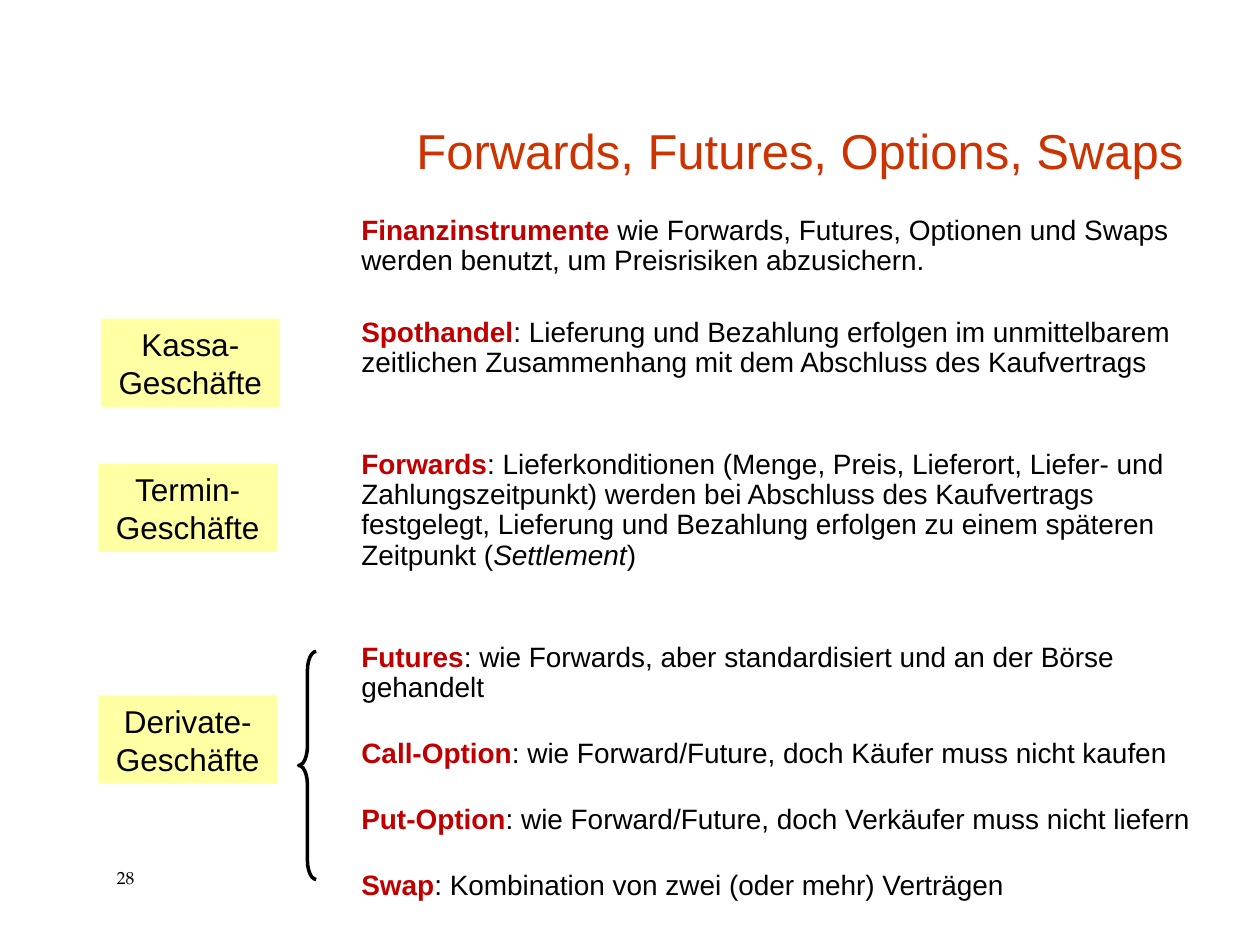
import pptx
import pptx.dml.color
import pptx.enum.shapes
import pptx.enum.text
import pptx.util
from lxml import etree

COLORS = {"text": "000000", "title": "CC3300", "term": "C00000", "box": "FFFFA3"}
COLS, ROWS = 100, 75
WIDTH, HEIGHT = pptx.util.Inches(10), pptx.util.Inches(7.5)
ALIGN = pptx.enum.text.PP_ALIGN
SHAPE = pptx.enum.shapes.MSO_SHAPE

TERMS = [
    (0, "Finanzinstrumente", " wie Forwards, Futures, Optionen und Swaps werden benutzt, "
        "um Preisrisiken abzusichern."),
    (23.5, "Spothandel", ": Lieferung und Bezahlung erfolgen im unmittelbarem zeitlichen "
        "Zusammenhang mit dem Abschluss des Kaufvertrags"),
    (41, "Forwards", ": Lieferkonditionen (Menge, Preis, Lieferort, Liefer- und "
        "Zahlungszeitpunkt) werden bei Abschluss des Kaufvertrags festgelegt, Lieferung und "
        "Bezahlung erfolgen zu einem späteren Zeitpunkt (", "Settlement", ")"),
    (41, "Futures", ": wie Forwards, aber standardisiert und an der Börse gehandelt"),
    (20.5, "Call-Option", ": wie Forward/Future, doch Käufer muss nicht kaufen"),
    (20.5, "Put-Option", ": wie Forward/Future, doch Verkäufer muss nicht liefern"),
    (20.5, "Swap", ": Kombination von zwei (oder mehr) Verträgen"),
]
BOXES = [(8, 25.3, "Kassa-"), (7.8, 36.8, "Termin-"), (7.8, 55.2, "Derivate-")]


def rgb(name):
    """Return the named colour."""
    return pptx.dml.color.RGBColor.from_string(COLORS[name])


def place(col, row, cols, rows):
    """Turn grid columns and rows into slide lengths."""
    return (int(WIDTH * col / COLS), int(HEIGHT * row / ROWS),
            int(WIDTH * cols / COLS), int(HEIGHT * rows / ROWS))


def style(r, size, color="text", font="Arial", bold=False, italic=False):
    """Format one run."""
    r.font.size, r.font.name = pptx.util.Pt(size), font
    r.font.bold, r.font.italic = bold, italic
    r.font.color.rgb = rgb(color)


def write(tf, text, size, align=ALIGN.LEFT, **look):
    """Fill a text frame with one formatted paragraph."""
    tf.word_wrap = True
    p = tf.paragraphs[0]
    p.text, p.alignment = text, align
    for r in p.runs:
        style(r, size, **look)


def add_label(s, grid, text, size, **look):
    """Add a text box with a single paragraph."""
    tf = s.shapes.add_textbox(*place(*grid)).text_frame
    write(tf, text, size, **look)
    return tf


def add_terms(s, grid):
    """Add the list of terms and their explanations."""
    tf = s.shapes.add_textbox(*place(*grid)).text_frame
    tf.word_wrap = True
    for i, (gap, *parts) in enumerate(TERMS):
        p = tf.add_paragraph() if i else tf.paragraphs[0]
        p.line_spacing = 0.9
        if gap:
            p.space_before = pptx.util.Pt(gap)
        for n, part in enumerate(parts):
            r = p.add_run()
            r.text = part
            style(r, 16, "text" if n else "term", bold=n == 0, italic=n == 2)


def add_box(s, col, row, kind):
    """Add a yellow box naming a kind of deal."""
    sp = s.shapes.add_shape(SHAPE.RECTANGLE, *place(col, row, 14.2, 7))
    sp.shadow.inherit = False
    sp.fill.solid()
    sp.fill.fore_color.rgb = rgb("box")
    sp.line.fill.background()
    write(sp.text_frame, kind + "\nGeschäfte", 18, ALIGN.CENTER)


def add_brace(s, grid):
    """Add the brace that groups the derivatives."""
    sp = s.shapes.add_shape(SHAPE.LEFT_BRACE, *place(*grid))
    sp.shadow.inherit = False
    sp.adjustments[0], sp.adjustments[1] = 1.08, 0.5
    sp.fill.background()
    sp.line.color.rgb = rgb("text")
    sp.line.width = pptx.util.Pt(2)


def main():
    """Build the slide and save it."""
    prs = pptx.Presentation()
    prs.slide_width, prs.slide_height = WIDTH, HEIGHT
    s = prs.slides.add_slide(prs.slide_layouts[6])
    add_label(s, (8.3, 68.3, 6.7, 2.7), "28", 10, font="TeX Gyre Pagella")
    tf = add_label(s, (20.9, 4.2, 74, 10.5), "Forwards, Futures, Options, Swaps", 28,
                   align=ALIGN.RIGHT, color="title")
    tf.vertical_anchor = pptx.enum.text.MSO_ANCHOR.BOTTOM
    add_terms(s, (27.7, 16.7, 68.4, 51))
    for box in BOXES:
        add_box(s, *box)
    add_brace(s, (23.7, 51.7, 1.4, 18.1))
    prs.save("out.pptx")


if __name__ == "__main__":
    main()
